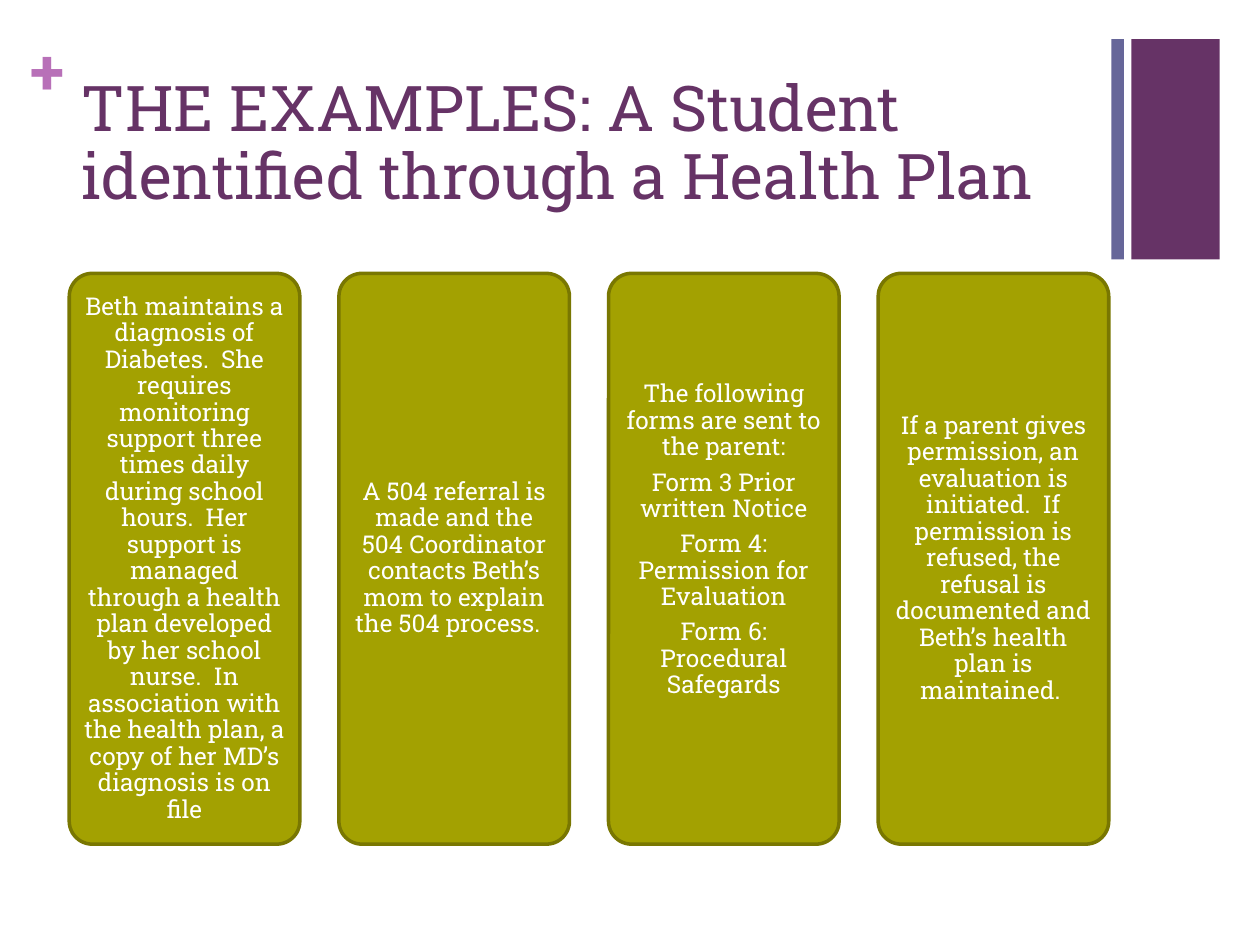
from pptx import Presentation
from pptx.dml.color import RGBColor
from pptx.enum import shapes, text
from pptx.util import Inches, Pt

FONT = "Roboto Slab"
COLORS = {"purple": "663366", "blue": "666699", "orchid": "B870B8",
          "olive": "A3A101", "olive_edge": "797701", "white": "FFFFFF"}

TITLE = "THE EXAMPLES: A Student identified through a Health Plan"
CARDS = [
    ["Beth maintains a diagnosis of Diabetes.  She requires monitoring support "
     "three times daily during school hours.  Her support is managed through a "
     "health plan developed by her school nurse.  In association with the health "
     "plan, a copy of her MD’s diagnosis is on file"],
    ["A 504 referral is made and the 504 Coordinator contacts Beth’s mom to "
     "explain the 504 process.  "],
    ["The following forms are sent to the parent:",
     "Form 3 Prior written Notice",
     "Form 4: Permission for Evaluation",
     "Form 6: Procedural Safegards"],
    ["If a parent gives permission, an evaluation is initiated.  If permission is "
     "refused, the refusal is documented and Beth’s health plan is maintained. "],
]
BARS = [("purple", 8.98, 0.7), ("blue", 8.82, 0.1)]  # color, left, width

CARD_LEFT, CARD_TOP, CARD_WIDTH, CARD_HEIGHT = 0.55, 2.17, 1.83, 4.53
CARD_STEP = 2.14
CARD_INSET = 0.06
LIST_BOTTOM_INSET = 0.35  # lifts the list of forms above the middle


def color(name):
    return RGBColor.from_string(COLORS[name])


def set_insets(frame, left, top, right, bottom):
    frame.margin_left, frame.margin_top = Inches(left), Inches(top)
    frame.margin_right, frame.margin_bottom = Inches(right), Inches(bottom)


def style(para, size, color_name, bold=False):
    for span in para.runs:
        span.font.name = FONT
        span.font.size = Pt(size)
        span.font.bold = bold
        span.font.color.rgb = color(color_name)


def add_block(page, kind, left, top, width, height, fill):
    block = page.shapes.add_shape(kind, Inches(left), Inches(top),
                                  Inches(width), Inches(height))
    block.shadow.inherit = False
    block.fill.solid()
    block.fill.fore_color.rgb = color(fill)
    block.line.fill.background()
    return block


def add_card(page, index, lines):
    card = add_block(page, shapes.MSO_SHAPE.ROUNDED_RECTANGLE,
                     CARD_LEFT + index * CARD_STEP, CARD_TOP,
                     CARD_WIDTH, CARD_HEIGHT, "olive")
    card.adjustments[0] = 0.1
    card.line.color.rgb = color("olive_edge")
    card.line.width = Pt(2)

    frame = card.text_frame
    frame.word_wrap = True
    frame.vertical_anchor = text.MSO_ANCHOR.MIDDLE
    bottom = LIST_BOTTOM_INSET if len(lines) > 1 else CARD_INSET
    set_insets(frame, CARD_INSET, CARD_INSET, CARD_INSET, bottom)
    frame.text = "\n".join(lines)
    for para in frame.paragraphs:
        para.alignment = text.PP_ALIGN.CENTER
        para.line_spacing = 0.9
        para.space_after = Pt(5)
        style(para, 14, "white")


def main():
    deck = Presentation()
    deck.slide_width, deck.slide_height = Inches(10), Inches(7.5)
    page = deck.slides.add_slide(deck.slide_layouts[5])

    # Corner bars
    for fill, left, width in BARS:
        add_block(page, shapes.MSO_SHAPE.RECTANGLE, left, 0.31, width, 1.75, fill)

    # Plus sign
    plus = page.shapes.add_textbox(Inches(0.24), Inches(0.25),
                                   Inches(0.29), Inches(0.61))
    set_insets(plus.text_frame, 0, 0, 0, 0)
    plus.text_frame.text = "+"
    style(plus.text_frame.paragraphs[0], 36, "orchid", bold=True)

    # Title
    title = page.shapes.title
    title.left, title.top = Inches(0.55), Inches(0.53)
    title.width, title.height = Inches(8.26), Inches(1.22)
    frame = title.text_frame
    frame.text = TITLE
    frame.word_wrap = True
    frame.auto_size = text.MSO_AUTO_SIZE.NONE
    frame.vertical_anchor = text.MSO_ANCHOR.TOP
    set_insets(frame, 0.1, 0.08, 0.1, 0)
    para = frame.paragraphs[0]
    para.alignment = text.PP_ALIGN.LEFT
    para.line_spacing = 0.9
    style(para, 36, "purple")

    # Cards
    for index, lines in enumerate(CARDS):
        add_card(page, index, lines)

    deck.save("out.pptx")


if __name__ == "__main__":
    main()
